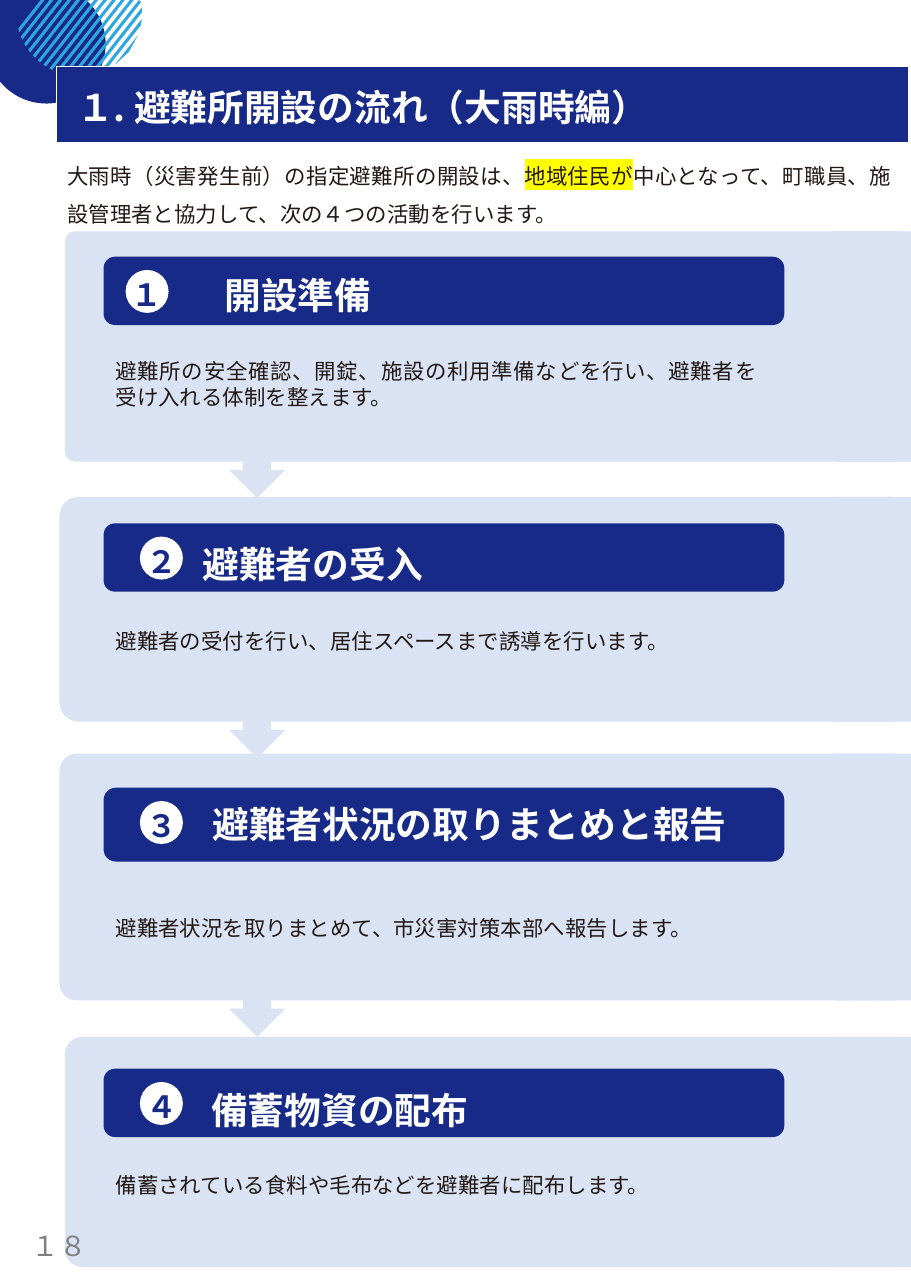
from dataclasses import dataclass
from math import acos, asin, cos, sin, sqrt

from lxml import etree
from pptx import Presentation
from pptx.dml.color import RGBColor
from pptx.enum.shapes import MSO_SHAPE
from pptx.enum.text import MSO_ANCHOR, MSO_AUTO_SIZE, PP_ALIGN
from pptx.oxml.ns import qn
from pptx.util import Inches, Pt

ROUNDED, RECTANGLE = MSO_SHAPE.ROUNDED_RECTANGLE, MSO_SHAPE.RECTANGLE
OVAL, DOWN_ARROW = MSO_SHAPE.OVAL, MSO_SHAPE.DOWN_ARROW
TOP, NO_FIT = MSO_ANCHOR.TOP, MSO_AUTO_SIZE.NONE
LEFT, CENTER, JUSTIFY = PP_ALIGN.LEFT, PP_ALIGN.CENTER, PP_ALIGN.JUSTIFY
PAGE_WIDTH, PAGE_HEIGHT = 8.27, 11.69


@dataclass(frozen=True)
class Theme:
    navy: str = "172A88"
    pale: str = "DAE3F3"
    sky: str = "2EA7E0"
    white: str = "FFFFFF"
    ink: str = "221815"
    grey: str = "808080"
    marker: str = "FFFF00"
    japanese: str = "Noto Sans CJK JP"
    serif: str = "TeX Gyre Schola"
    sans: str = "Arial"
    heading: int = 24
    number: int = 20
    page: int = 18
    body: int = 14


@dataclass(frozen=True)
class Stage:
    number: str
    heading: str
    detail: str
    box: tuple
    corner: float
    bar: tuple
    badge_left: float
    heading_at: tuple
    detail_top: float


THEME = Theme()
STAGES = [
    Stage("１", "開設準備",
          "避難所の安全確認、開錠、施設の利用準備などを行い、避難者を受け入れる体制を整えます。",
          (0.59, 2.1, 7.68, 2.09), 0.043, (0.23, 0.62), 1.14, (1.94, 0.1), 0.91),
    Stage("２", "避難者の受入", "避難者の受付を行い、居住スペースまで誘導を行います。",
          (0.54, 4.51, 7.73, 2.04), 0.085, (0.24, 0.62), 1.27, (1.74, 0.12), 0.94),
    Stage("３", "避難者状況の取りまとめと報告",
          "避難者状況を取りまとめて、市災害対策本部へ報告します。",
          (0.54, 6.84, 7.73, 2.24), 0.071, (0.31, 0.67), 1.27, (1.83, 0.08), 1.15),
    Stage("４", "備蓄物資の配布", "備蓄されている食料や毛布などを避難者に配布します。",
          (0.59, 9.41, 7.68, 2.09), 0.076, (0.29, 0.62), 1.27, (1.82, 0.12), 0.93),
]


def paint(shape, fill):
    shape.shadow.inherit = False
    shape.fill.solid()
    shape.fill.fore_color.rgb = RGBColor.from_string(fill)
    shape.line.fill.background()
    return shape


def block(slide, kind, box, fill, corner=None):
    shape = paint(slide.shapes.add_shape(kind, *map(Inches, box)), fill)
    if corner is not None:
        shape.adjustments[0] = corner
    return shape


def format_run(run, font, size, color, bold=False):
    run.font.name, run.font.size, run.font.bold = font, Pt(size), bold
    run.font.color.rgb = RGBColor.from_string(color)
    east_asian = etree.Element(qn("a:ea"), typeface=THEME.japanese)
    run.font._element.find(qn("a:latin")).addnext(east_asian)


def set_margins(frame, left, top, right, bottom):
    frame.margin_left, frame.margin_top = Inches(left), Inches(top)
    frame.margin_right, frame.margin_bottom = Inches(right), Inches(bottom)


def write(frame, parts, align, *style):
    paragraph = frame.paragraphs[0]
    paragraph.alignment = align
    for part in parts:
        run = paragraph.add_run()
        run.text = part
        format_run(run, *style)
    return paragraph


def label(slide, box, parts, align, *style, margins=(0.1, 0.05, 0.1, 0.05)):
    frame = slide.shapes.add_textbox(*map(Inches, box)).text_frame
    frame.word_wrap = True
    set_margins(frame, *margins)
    return write(frame, parts, align, *style)


def body_text(slide, box, *parts):
    return label(slide, box, parts, JUSTIFY, THEME.japanese, THEME.body, THEME.ink,
                 margins=(0.08, 0.01, 0, 0))


def outline(slide, contours, fill):
    builder = None
    for contour in contours:
        points = [(Inches(x), Inches(y)) for x, y in contour]
        if builder is None:
            builder = slide.shapes.build_freeform(*points[0])
        else:
            builder.move_to(*points[0])
        builder.add_line_segments(points[1:], close=True)
    paint(builder.convert_to_shape(), fill)


def clipped_disc(x, y, radius, steps=40):
    start, end = asin(-y / radius), acos(-x / radius)
    angles = [start + (end - start) * i / steps for i in range(steps + 1)]
    return [(0, 0)] + [(x + radius * cos(a), y + radius * sin(a)) for a in angles]


def chord(top_x, x, y, radius, slope):
    a = 1 + 1 / slope ** 2
    b = (top_x - x) / slope + y
    c = (top_x - x) ** 2 + y ** 2 - radius ** 2
    root = sqrt(max(0, b * b - a * c))
    ends = [max(0, (b - root) / a), (b + root) / a]
    return [(top_x - end / slope, end) for end in ends]


def add_corner_ornament(slide, left, top):
    outline(slide, [clipped_disc(left + 0.42, top + 0.4, 0.54)], THEME.navy)
    stripes = []
    for i in range(15):
        start = left + 0.37 + 0.081 * i
        upper, lower = chord(start, left + 0.72, top + 0.12, 0.57, 1.275)
        next_upper, next_lower = chord(start + 0.035, left + 0.72, top + 0.12, 0.57, 1.275)
        stripes.append([upper, lower, next_lower, next_upper])
    outline(slide, stripes, THEME.sky)


def add_title(slide, box, text):
    title = slide.shapes.title
    title.left, title.top, title.width, title.height = map(Inches, box)
    title.fill.solid()
    title.fill.fore_color.rgb = RGBColor.from_string(THEME.navy)
    title.line.color.rgb = RGBColor.from_string(THEME.white)
    title.line.width = Pt(0.75)
    frame = title.text_frame
    frame.auto_size, frame.vertical_anchor = NO_FIT, TOP
    set_margins(frame, 0.19, 0.17, 0, 0)
    paragraph = write(frame, [text], LEFT, THEME.japanese, THEME.heading, THEME.white, True)
    paragraph.line_spacing = 1.0
    slide.shapes._spTree.append(title._element)


def add_intro(slide, box):
    paragraph = body_text(
        slide, box, "大雨時（災害発生前）の指定避難所の開設は、", "地域住民が",
        "中心となって、町職員、施設管理者と協力して、次の４つの活動を行います。")
    paragraph.line_spacing = 1.5
    highlight = etree.Element(qn("a:highlight"))
    etree.SubElement(highlight, qn("a:srgbClr"), val=THEME.marker)
    paragraph.runs[1].font._element.find(qn("a:latin")).addprevious(highlight)


def add_stage(slide, stage, has_next):
    left, top, width, height = stage.box
    block(slide, ROUNDED, stage.box, THEME.pale, stage.corner)
    block(slide, RECTANGLE, (left + width - 0.7, top, 0.7, height), THEME.pale)
    if has_next:
        block(slide, DOWN_ARROW, (2.08, top + height - 0.34, 0.51, 0.67), THEME.pale)

    bar_offset, bar_height = stage.bar
    bar_top = top + bar_offset
    block(slide, ROUNDED, (0.94, bar_top, 6.18, bar_height), THEME.navy)
    badge = block(slide, OVAL, (stage.badge_left, bar_top + 0.12, 0.39, 0.39), THEME.white)
    badge.text_frame.word_wrap = False
    badge.text_frame.vertical_anchor = TOP
    set_margins(badge.text_frame, 0, 0, 0, 0)
    write(badge.text_frame, [stage.number], CENTER, THEME.serif, THEME.number, THEME.navy, True)

    heading_left, heading_offset = stage.heading_at
    label(slide, (heading_left, bar_top + heading_offset, 5.1, 0.5), [stage.heading],
          LEFT, THEME.serif, THEME.heading, THEME.white, True)
    body_text(slide, (0.97, bar_top + stage.detail_top, 5.9, 0.49), stage.detail)


def main():
    deck = Presentation()
    deck.slide_width, deck.slide_height = Inches(PAGE_WIDTH), Inches(PAGE_HEIGHT)
    slide = deck.slides.add_slide(deck.slide_layouts[5])
    add_corner_ornament(slide, 0, 0)
    add_title(slide, (0.51, 0.6, 7.74, 0.69), "１. 避難所開設の流れ（大雨時編）")
    add_intro(slide, (0.53, 1.35, 7.56, 0.69))
    for stage in STAGES:
        add_stage(slide, stage, stage is not STAGES[-1])
    label(slide, (0.15, 11.11, 0.78, 0.4), ["１８"], CENTER, THEME.sans, THEME.page, THEME.grey)
    deck.save("out.pptx")


if __name__ == "__main__":
    main()
